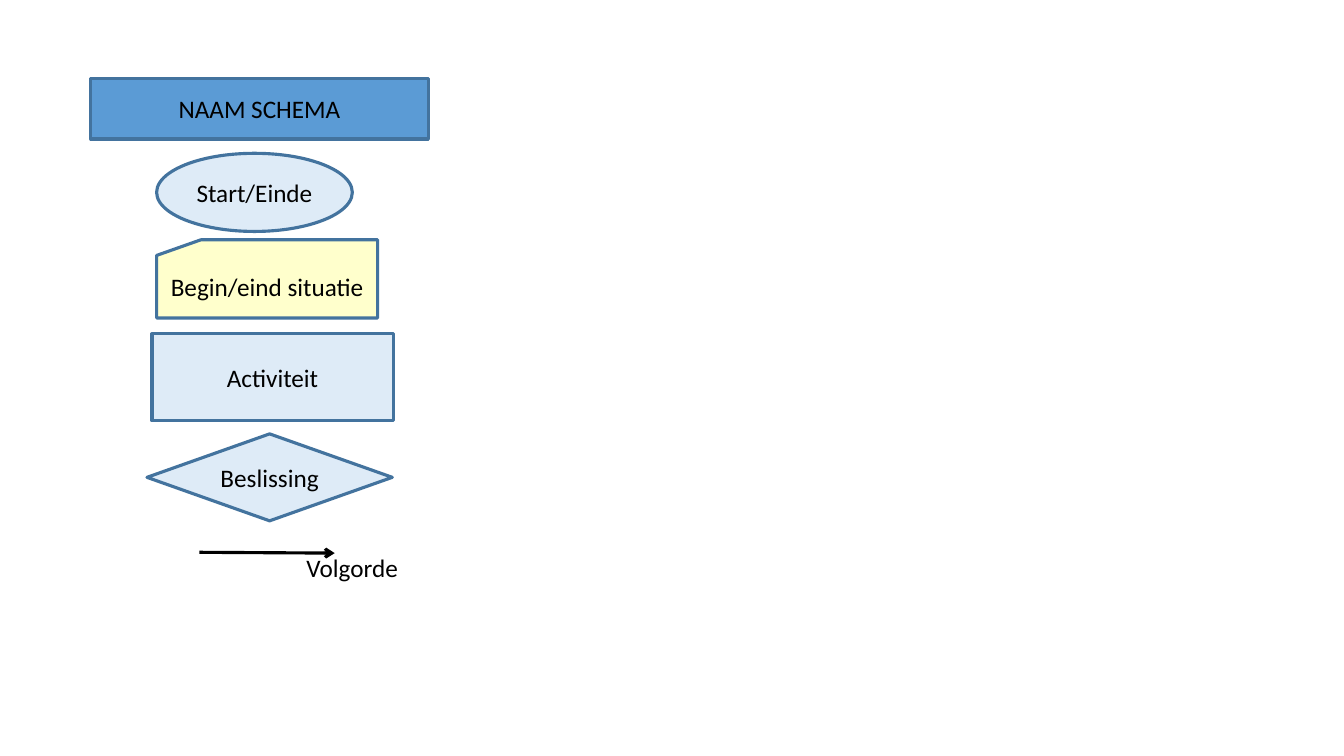
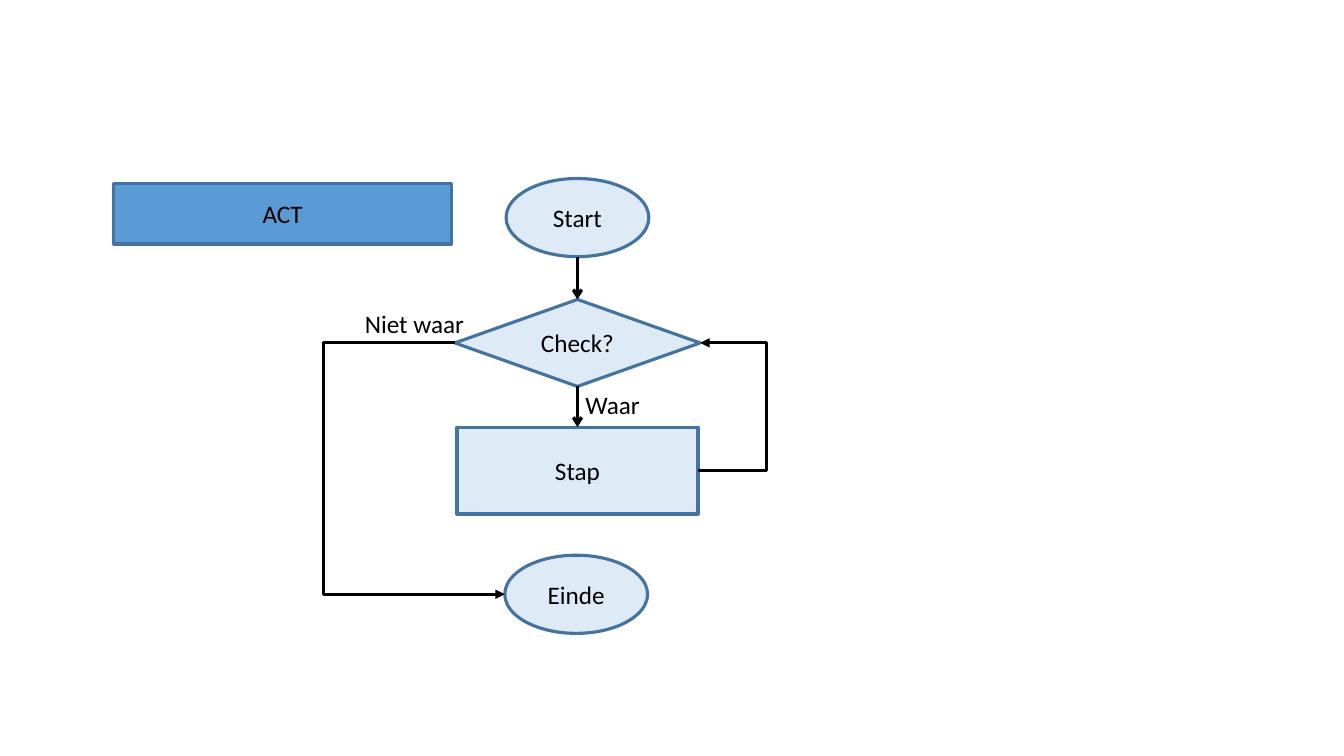
from dataclasses import dataclass

import pptx
import pptx.dml.color
import pptx.enum.shapes
import pptx.enum.text
import pptx.oxml.ns
import pptx.util
from lxml import etree

COLS, ROWS = 32, 18
WIDE, HIGH = pptx.util.Inches(13.333), pptx.util.Inches(7.5)
FONT, SIZE, LINE = "Calibri", 18, 2.25
BLUE, PALE, CREAM, EDGE, BLACK = "5B9BD5", "DEEBF7", "FFFFCC", "43739E", "000000"

KIND = pptx.enum.shapes.MSO_SHAPE
LINK = pptx.enum.shapes.MSO_CONNECTOR
ALIGN = pptx.enum.text.PP_ALIGN
ANCHOR = pptx.enum.text.MSO_ANCHOR
FIT = pptx.enum.text.MSO_AUTO_SIZE
qn = pptx.oxml.ns.qn

Point = tuple[float, float]


@dataclass(frozen=True)
class Node:
    """A box whose place and size are in grid columns and rows."""
    text: str
    x: float
    y: float
    w: float
    h: float
    kind: int = KIND.RECTANGLE
    fill: str = PALE

    @property
    def top(self) -> Point:
        return self.x + self.w / 2, self.y

    @property
    def base(self) -> Point:
        return self.x + self.w / 2, self.y + self.h

    @property
    def left(self) -> Point:
        return self.x, self.y + self.h / 2

    @property
    def right(self) -> Point:
        return self.x + self.w, self.y + self.h / 2


def col(n: float) -> int:
    return round(WIDE * n / COLS)


def row(n: float) -> int:
    return round(HIGH * n / ROWS)


def color(code: str):
    return pptx.dml.color.RGBColor.from_string(code)


def write(shape, text: str, *, align=ALIGN.CENTER, anchor=ANCHOR.MIDDLE,
          wrap=True, fit=FIT.NONE) -> None:
    frame = shape.text_frame
    frame.text = text
    frame.word_wrap, frame.auto_size = wrap, fit
    frame.vertical_anchor = anchor
    para = frame.paragraphs[0]
    para.alignment = align
    para.font.name, para.font.size = FONT, pptx.util.Pt(SIZE)
    para.font.color.rgb = color(BLACK)


def paint(shape, node: Node) -> None:
    shape.fill.solid()
    shape.fill.fore_color.rgb = color(node.fill)
    shape.line.color.rgb = color(EDGE)
    shape.line.width = pptx.util.Pt(LINE)
    write(shape, node.text)


def draw(slide, node: Node) -> None:
    shape = slide.shapes.add_shape(
        node.kind, col(node.x), row(node.y), col(node.w), row(node.h))
    shape.shadow.inherit = False
    paint(shape, node)


def label(slide, text: str, x: float, y: float, w: float) -> None:
    box = slide.shapes.add_textbox(col(x), row(y), col(w), row(0.97))
    write(box, text, align=ALIGN.LEFT, anchor=ANCHOR.TOP,
          wrap=False, fit=FIT.SHAPE_TO_FIT_TEXT)


def arrow(slide, start: Point, end: Point, bend: float | None = None) -> None:
    """Draw a straight arrow, or an elbow that turns at column bend."""
    kind = LINK.STRAIGHT if bend is None else LINK.ELBOW
    link = slide.shapes.add_connector(
        kind, col(start[0]), row(start[1]), col(end[0]), row(end[1]))
    link.line.color.rgb = color(BLACK)
    link.line.width = pptx.util.Pt(LINE)
    props = link._element.spPr
    tip = "arrow" if bend is None else "triangle"
    etree.SubElement(props.find(qn("a:ln")), qn("a:tailEnd"), type=tip)
    etree.SubElement(props, qn("a:effectLst"))
    if bend is not None:
        share = (bend - start[0]) / (end[0] - start[0])
        guides = props.find(qn("a:prstGeom")).find(qn("a:avLst"))
        etree.SubElement(guides, qn("a:gd"), name="adj1",
                         fmla=f"val {round(share * 100000)}")


def page(deck, text: str, x: float, y: float):
    """Add a slide whose title is the blue name box."""
    slide = deck.slides.add_slide(deck.slide_layouts[5])
    title = slide.shapes.title
    title.left, title.top = col(x), row(y)
    title.width, title.height = col(8.04), row(1.44)
    paint(title, Node(text, x, y, 8.04, 1.44, fill=BLUE))
    return slide


def oval(text: str, x: float, y: float, w: float) -> Node:
    return Node(text, x, y, w, 1.86, KIND.OVAL)


def step(text: str, x: float, y: float) -> Node:
    return Node(text, x, y, 5.74, 2.07)


def test(text: str, x: float, y: float) -> Node:
    return Node(text, x, y, 5.84, 2.07, KIND.DIAMOND)


def legend(deck) -> None:
    slide = page(deck, "NAAM SCHEMA", 2.16, 1.87)
    for node in (
        oval("Start/Einde", 3.73, 3.65, 4.66),
        Node("Begin/eind situatie", 3.73, 5.71, 5.26, 1.86,
             KIND.FLOWCHART_CARD, CREAM),
        step("Activiteit", 3.62, 7.95),
        test("Beslissing", 3.5, 10.33),
    ):
        draw(slide, node)
    arrow(slide, (4.75, 13.15), (7.97, 13.17))
    label(slide, "Volgorde", 7.06, 13.03, 2.69)


def flow(deck) -> None:
    slide = page(deck, "ACT", 2.71, 4.37)
    axis = 13.75
    start = oval("Start", axis - 1.7, 4.25, 3.4)
    check = test("Check?", axis - 2.92, 7.13)
    stap = step("Stap", axis - 2.87, 10.17)
    einde = oval("Einde", axis - 1.73, 13.22, 3.4)
    for node in (start, check, stap, einde):
        draw(slide, node)
    label(slide, "Niet waar", 8.45, 7.22, 2.88)
    label(slide, "Waar", 13.7, 9.15, 1.8)
    arrow(slide, start.base, check.top)
    arrow(slide, check.base, stap.top)
    arrow(slide, stap.right, check.right, bend=18.25)
    arrow(slide, check.left, einde.left, bend=7.7)


def main() -> None:
    deck = pptx.Presentation()
    deck.slide_width, deck.slide_height = WIDE, HIGH
    legend(deck)
    flow(deck)
    deck.save("out.pptx")


if __name__ == "__main__":
    main()
